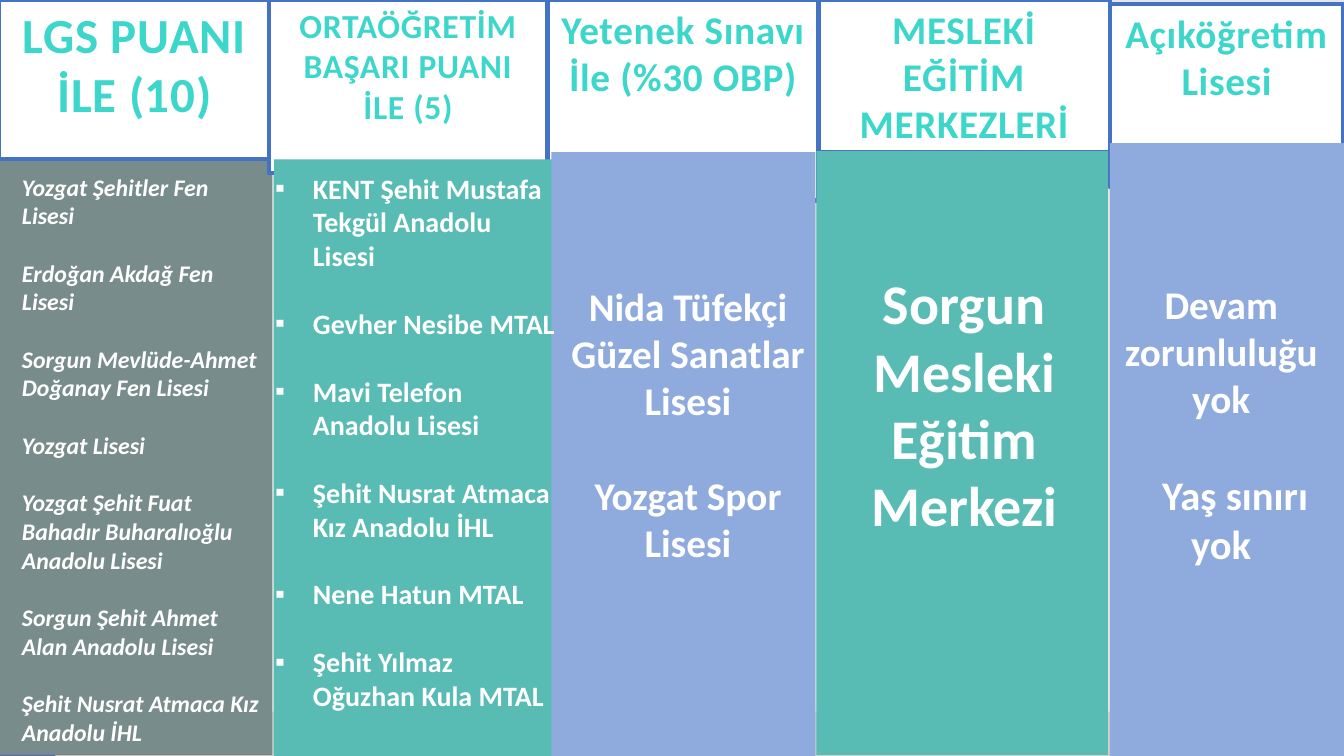
import pptx
import pptx.dml.color
import pptx.enum.shapes
import pptx.enum.text
import pptx.oxml.ns
import pptx.util
from lxml import etree

Pt = pptx.util.Pt
qn = pptx.oxml.ns.qn
CENTER = pptx.enum.text.PP_ALIGN.CENTER
LEFT = pptx.enum.text.PP_ALIGN.LEFT
TEAL, BLUE, ACCENT, WHITE = "58BBB4", "8FAADC", "4472C4", "FFFFFF"


def paint(fmt, colour):
    fmt.solid()
    fmt.fore_color.rgb = pptx.dml.color.RGBColor.from_string(colour)


def add_block(box, fill=None, lines=(), size=18, colour=WHITE, align=CENTER, gap=0):
    box = [Pt(v) for v in box]
    if fill:
        sp = s.shapes.add_shape(pptx.enum.shapes.MSO_SHAPE.RECTANGLE, *box)
        sp.shadow.inherit = False
        paint(sp.fill, fill)
        sp.line.fill.background()
    else:
        sp = s.shapes.add_textbox(*box)
    tf = sp.text_frame
    tf.word_wrap = True
    tf.vertical_anchor = pptx.enum.text.MSO_ANCHOR.TOP
    for i, line in enumerate(lines):
        p = tf.paragraphs[0] if i == 0 else tf.add_paragraph()
        p.text = line
        p.alignment = align
        if i:
            p.space_before = Pt(gap)
        for r in p.runs:
            r.font.name = "Calibri"
            r.font.size = Pt(size)
            r.font.bold = True
            paint(r.font.fill, colour)
    return sp


prs = pptx.Presentation()
prs.slide_width, prs.slide_height = Pt(960), Pt(540)
s = prs.slides.add_slide(prs.slide_layouts[6])
paint(s.background.fill, "E7E6E6")

add_block((0, 508.3, 960, 31.7), "D0CECE")
add_block((0, 508.3, 39.6, 31.7), ACCENT)

add_block((-2.9, 108.7, 197.3, 430.6), "808080")
tint = add_block((-1.4, 111.6, 197.3, 427), TEAL)
rgb = tint.fill._xPr.find(qn("a:solidFill")).find(qn("a:srgbClr"))
etree.SubElement(rgb, qn("a:alpha")).set("val", "21000")

exam_schools = [
    "Yozgat Şehitler Fen Lisesi",
    "Erdoğan Akdağ Fen Lisesi",
    "Sorgun Mevlüde-Ahmet Doğanay Fen Lisesi",
    "Yozgat Lisesi",
    "Yozgat Şehit Fuat Bahadır Buharalıoğlu Anadolu Lisesi",
    "Sorgun Şehit Ahmet Alan Anadolu Lisesi",
    "Şehit Nusrat Atmaca Kız Anadolu İHL",
]
sp = add_block((8.6, 119.5, 185.8, 419), None, exam_schools, 17, align=LEFT, gap=20.7)
for p in sp.text_frame.paragraphs:
    p.runs[0].font.italic = True

headings = [
    ((-0.7, 0, 193.7, 113.8), ["LGS PUANI İLE (10)"], 35),
    ((192.2, 0, 198.7, 123.8), ["ORTAÖĞRETİM BAŞARI PUANI İLE (5)"], 24),
    ((391, 0, 193.7, 143.3), ["Yetenek Sınavı", "İle (%30 OBP)"], 28),
    ((584.6, 0, 208.1, 108.7), ["MESLEKİ EĞİTİM MERKEZLERİ"], 28),
    ((792.7, 2.9, 167, 131), ["Açıköğretim Lisesi"], 28),
]
for box, lines, size in headings:
    sp = add_block(box, WHITE, lines, size, "3DD6CB")
    paint(sp.line.fill, ACCENT)
    sp.line.width = Pt(3)
    for p in sp.text_frame.paragraphs:
        p.runs[0].font._element.set("spc", "50")

columns = [
    ((195.8, 113.8, 198.7, 426.2), TEAL),
    ((393.8, 108.7, 188.6, 432), BLUE),
    ((792.7, 102.2, 169.2, 437.8), BLUE),
    ((583.2, 108, 208.1, 431.3), TEAL),
]
for box, fill in columns:
    add_block(box, fill)

score_schools = [
    "KENT Şehit Mustafa Tekgül Anadolu Lisesi",
    "Gevher Nesibe MTAL",
    "Mavi Telefon Anadolu Lisesi",
    "Şehit Nusrat Atmaca Kız Anadolu İHL",
    "Nene Hatun MTAL",
    "Şehit Yılmaz Oğuzhan Kula MTAL",
]
sp = add_block((189.4, 118.8, 216.7, 395.3), None, score_schools, 20, align=LEFT, gap=24.4)
for p in sp.text_frame.paragraphs:
    pPr = p._p.get_or_add_pPr()
    pPr.set("marL", str(Pt(27)))
    pPr.set("indent", str(-Pt(27)))
    etree.SubElement(pPr, qn("a:buFont")).set("typeface", "Arial")
    etree.SubElement(pPr, qn("a:buChar")).set("char", "▪")

talent_schools = ["Nida Tüfekçi Güzel Sanatlar Lisesi", "Yozgat Spor Lisesi"]
add_block((399.6, 198, 183.6, 211), None, talent_schools, 28, gap=34.2)

open_rules = ["Devam zorunluluğu yok", "Yaş sınırı yok"]
sp = add_block((780.5, 196.9, 183.6, 246.6), None, open_rules, 28, gap=34.2)
p = sp.text_frame.paragraphs[1]
p.runs[0].font.size = Pt(29)
p._p.get_or_add_pPr().set("indent", str(Pt(20)))

add_block((579.6, 188.6, 218.2, 200.9), None, ["Sorgun Mesleki Eğitim Merkezi"], 40)

prs.save("out.pptx")
